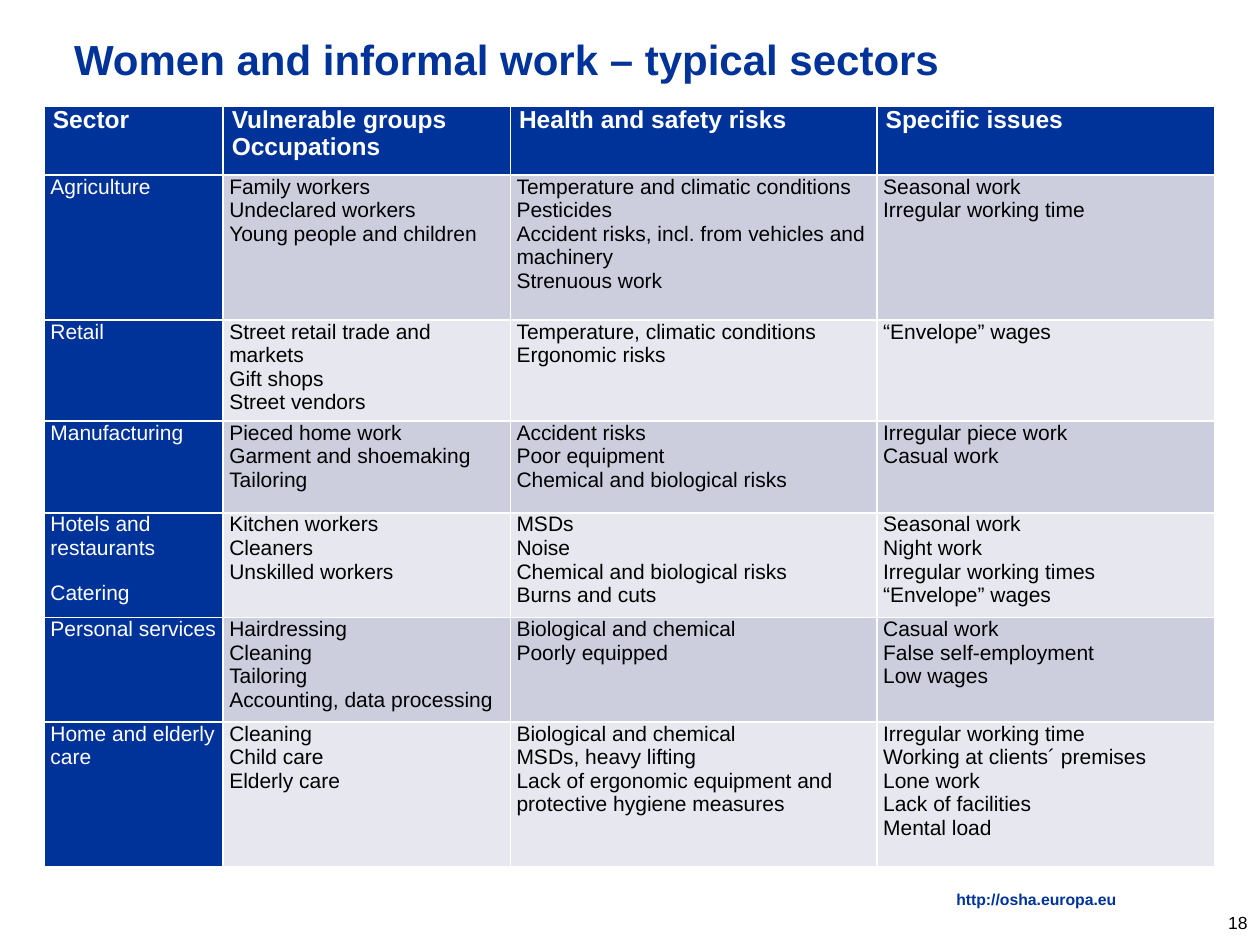
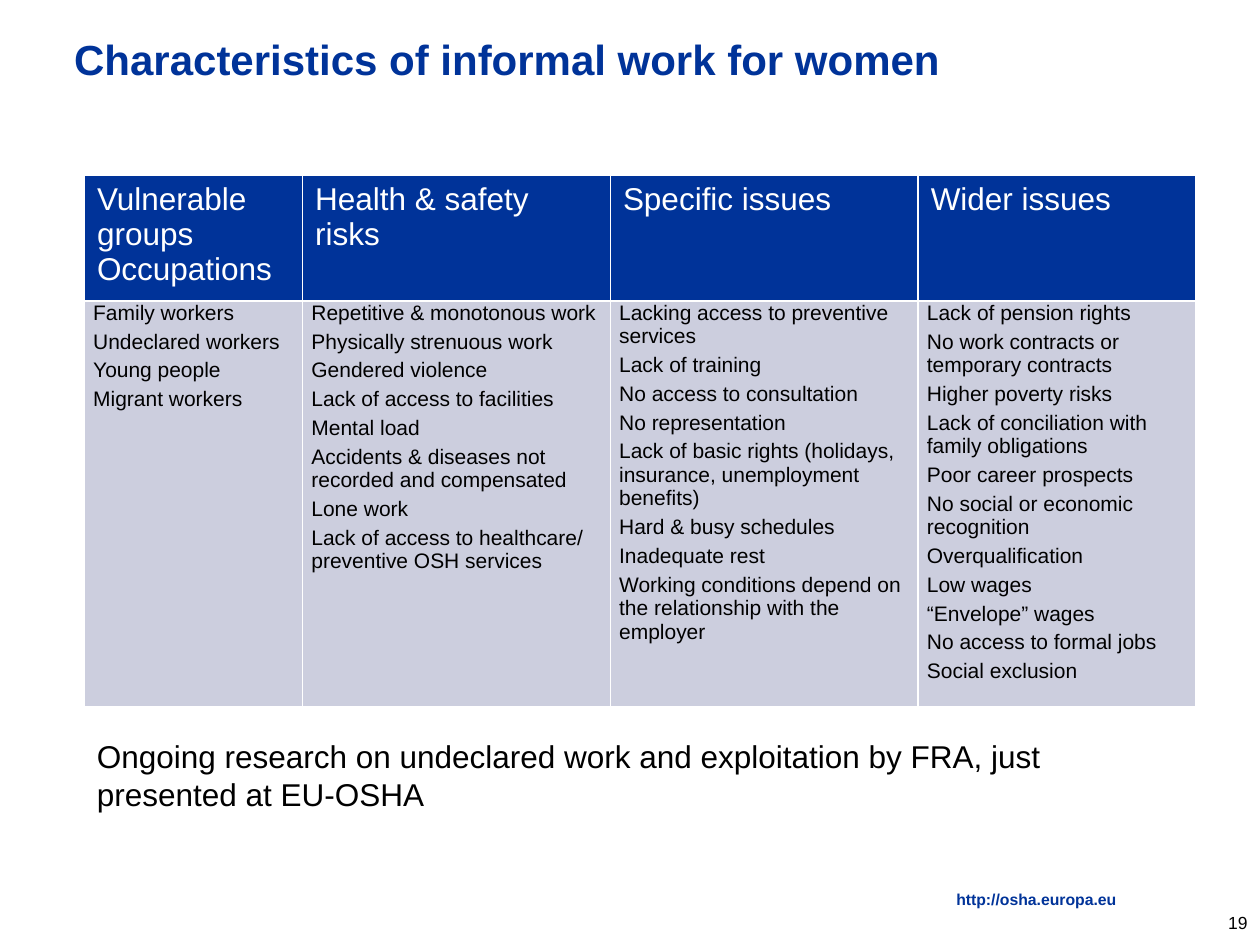
from collections import namedtuple
from copy import deepcopy

from lxml.etree import SubElement
from pptx import Presentation
from pptx.dml.color import RGBColor
from pptx.enum.text import MSO_ANCHOR, PP_ALIGN
from pptx.oxml.ns import qn
from pptx.util import Emu, Inches, Pt

NAVY = RGBColor(0x00, 0x33, 0x99)
WHITE = RGBColor(0xFF, 0xFF, 0xFF)
BLACK = RGBColor(0x00, 0x00, 0x00)
LILAC = RGBColor(0xCC, 0xCE, 0xDE)
MIST = RGBColor(0xE7, 0xE8, 0xEF)
FONT = "Arial"

GRID = Inches(0.1)
GRID_COLUMNS, GRID_ROWS = 100, 75

Box = namedtuple("Box", "left top width height")
TextStyle = namedtuple("TextStyle", "size color bold before after", defaults=(False, 0, 0))
CellStyle = namedtuple("CellStyle", "text fill margin_x margin_y", defaults=(0.5, 0))

TITLE_BOX = Box(4.9, 2, 82.7, 5.4)
ADDRESS_BOX = Box(24.8, 70.8, 63.8, 1.1)
NUMBER_BOX = Box(93.3, 71.2, 6.7, 4)
SECTORS_BOX = Box(3.5, 8.4, 92.9, 59.9)
TRAITS_BOX = Box(6.7, 13.9, 88.2, 41.4)
RESEARCH_BOX = Box(6.7, 58, 88.2, 7.1)

TITLE = TextStyle(24, NAVY, True)
ADDRESS = TextStyle(9, NAVY, True)
NUMBER = TextStyle(10, BLACK)
RESEARCH = TextStyle(18, BLACK)
SECTOR_HEAD = CellStyle(TextStyle(14, WHITE, True), NAVY, 0.7)
SECTOR_NAME = CellStyle(TextStyle(12, WHITE, False, 6, 6), NAVY)
SECTOR_BANDS = [CellStyle(TextStyle(12, BLACK), fill) for fill in (LILAC, MIST)]
TRAIT_HEAD = CellStyle(TextStyle(18, WHITE), NAVY, 1, 0.5)
TRAIT_LIST = CellStyle(TextStyle(12, BLACK, False, 3), LILAC, 0.7)

SECTOR_COLUMNS = (1.42, 2.28, 2.91, 2.68)
SECTOR_ROWS = (0.55, 1.15, 0.75, 0.73, 0.83, 0.83, 1.15)
SECTORS = [
    (["Sector"], ["Vulnerable groups\vOccupations"], ["Health and safety risks"], ["Specific issues"]),
    (["Agriculture"],
     ["Family workers", "Undeclared workers", "Young people and children"],
     ["Temperature and climatic conditions", "Pesticides",
      "Accident risks, incl. from vehicles and machinery", "Strenuous work"],
     ["Seasonal work", "Irregular working time"]),
    (["Retail"],
     ["Street retail trade and markets", "Gift shops", "Street vendors"],
     ["Temperature, climatic conditions", "Ergonomic risks"],
     ["“Envelope” wages"]),
    (["Manufacturing"],
     ["Pieced home work", "Garment and shoemaking", "Tailoring"],
     ["Accident risks", "Poor equipment", "Chemical and biological risks"],
     ["Irregular piece work", "Casual work"]),
    (["Hotels and restaurants", "Catering"],
     ["Kitchen workers", "Cleaners", "Unskilled workers"],
     ["MSDs", "Noise", "Chemical and biological risks", "Burns and cuts"],
     ["Seasonal work", "Night work", "Irregular working times", "“Envelope” wages"]),
    (["Personal services"],
     ["Hairdressing", "Cleaning", "Tailoring", "Accounting, data processing"],
     ["Biological and chemical", "Poorly equipped"],
     ["Casual work", "False self-employment", "Low wages"]),
    (["Home and elderly care"],
     ["Cleaning", "Child care", "Elderly care"],
     ["Biological and chemical", "MSDs, heavy lifting",
      "Lack of ergonomic equipment and protective hygiene measures"],
     ["Irregular working time", "Working at clients´ premises", "Lone work",
      "Lack of facilities", "Mental load"]),
]

TRAIT_COLUMNS = (1.73, 2.44, 2.44, 2.2)
TRAIT_ROWS = (0.93, 3.21)
TRAITS = [
    (["Vulnerable", "groups", "Occupations"], ["Health & safety", "risks"],
     ["Specific issues"], ["Wider issues"]),
    (["Family workers", "Undeclared workers", "Young people", "Migrant workers"],
     ["Repetitive & monotonous work", "Physically strenuous work", "Gendered violence",
      "Lack of access to facilities", "Mental load",
      "Accidents & diseases not recorded and compensated", "Lone work",
      "Lack of access to healthcare/\vpreventive OSH services"],
     ["Lacking access to preventive services", "Lack of training",
      "No access to consultation", "No representation",
      "Lack of basic rights (holidays, insurance, unemployment benefits)",
      "Hard & busy schedules", "Inadequate rest",
      "Working conditions depend on the relationship with the employer"],
     ["Lack of pension rights", "No work contracts or temporary contracts",
      "Higher poverty risks", "Lack of conciliation with family obligations",
      "Poor career prospects", "No social or economic recognition", "Overqualification",
      "Low wages", "“Envelope” wages", "No access to formal jobs", "Social exclusion"]),
]


def grid(units):
    return Emu(round(units * GRID))


def place(box):
    return [grid(units) for units in box]


def write(frame, lines, style):
    frame.text = "\n".join(lines)
    for index, paragraph in enumerate(frame.paragraphs):
        paragraph.space_before = Pt(style.before if index else 0)
        paragraph.space_after = Pt(style.after)
        for run in paragraph.runs:
            run.font.name = FONT
            run.font.size = Pt(style.size)
            run.font.bold = style.bold
            run.font.color.rgb = style.color
        for line_break in paragraph._p.findall(qn("a:br")):
            line_break.append(deepcopy(paragraph.runs[0]._r.rPr))


def add_text(slide, box, text, style, align=PP_ALIGN.LEFT, anchor=MSO_ANCHOR.TOP):
    frame = slide.shapes.add_textbox(*place(box)).text_frame
    frame.word_wrap = True
    frame.vertical_anchor = anchor
    write(frame, [text], style)
    frame.paragraphs[0].alignment = align
    return frame


def add_borders(cell):
    properties = cell._tc.get_or_add_tcPr()
    for index, side in enumerate(("a:lnL", "a:lnR", "a:lnT", "a:lnB")):
        line = properties.makeelement(qn(side), {"w": str(Pt(1))})
        fill = SubElement(line, qn("a:solidFill"))
        SubElement(fill, qn("a:srgbClr"), val=str(WHITE))
        properties.insert(index, line)


def fill_cell(cell, lines, style):
    cell.margin_left = cell.margin_right = grid(style.margin_x)
    cell.margin_top = cell.margin_bottom = grid(style.margin_y)
    cell.fill.solid()
    cell.fill.fore_color.rgb = style.fill
    write(cell.text_frame, lines, style.text)
    add_borders(cell)


def add_grid_table(slide, box, content, columns, rows, style_at):
    table = slide.shapes.add_table(len(rows), len(columns), *place(box)).table
    table.horz_banding = False
    for column, share in zip(table.columns, columns):
        column.width = grid(box.width * share / sum(columns))
    for row, share in zip(table.rows, rows):
        row.height = grid(box.height * share / sum(rows))
    for r, entries in enumerate(content):
        for c, lines in enumerate(entries):
            fill_cell(table.cell(r, c), lines, style_at(r, c))


def sector_style(row, column):
    if row == 0:
        return SECTOR_HEAD
    return SECTOR_BANDS[(row - 1) % 2] if column else SECTOR_NAME


def trait_style(row, column):
    return TRAIT_LIST if row else TRAIT_HEAD


def add_frame(deck, title, number):
    slide = deck.slides.add_slide(deck.slide_layouts[6])
    address = add_text(slide, ADDRESS_BOX, "http://osha.europa.eu", ADDRESS, PP_ALIGN.RIGHT)
    address.margin_left = address.margin_right = address.margin_top = address.margin_bottom = 0
    address.paragraphs[0].line_spacing = 0.9
    add_text(slide, NUMBER_BOX, str(number), NUMBER, PP_ALIGN.RIGHT, MSO_ANCHOR.MIDDLE)
    add_text(slide, TITLE_BOX, title, TITLE, anchor=MSO_ANCHOR.MIDDLE)
    return slide


def add_sectors_slide(deck):
    slide = add_frame(deck, "Women and informal work – typical sectors", 18)
    add_grid_table(slide, SECTORS_BOX, SECTORS, SECTOR_COLUMNS, SECTOR_ROWS, sector_style)


def add_traits_slide(deck):
    slide = add_frame(deck, "Characteristics of informal work for women", 19)
    add_grid_table(slide, TRAITS_BOX, TRAITS, TRAIT_COLUMNS, TRAIT_ROWS, trait_style)
    add_text(slide, RESEARCH_BOX,
             "Ongoing research on undeclared work and exploitation by FRA, "
             "just presented at EU-OSHA", RESEARCH)


def main():
    deck = Presentation()
    deck.slide_width = grid(GRID_COLUMNS)
    deck.slide_height = grid(GRID_ROWS)
    add_sectors_slide(deck)
    add_traits_slide(deck)
    deck.save("out.pptx")


if __name__ == "__main__":
    main()
